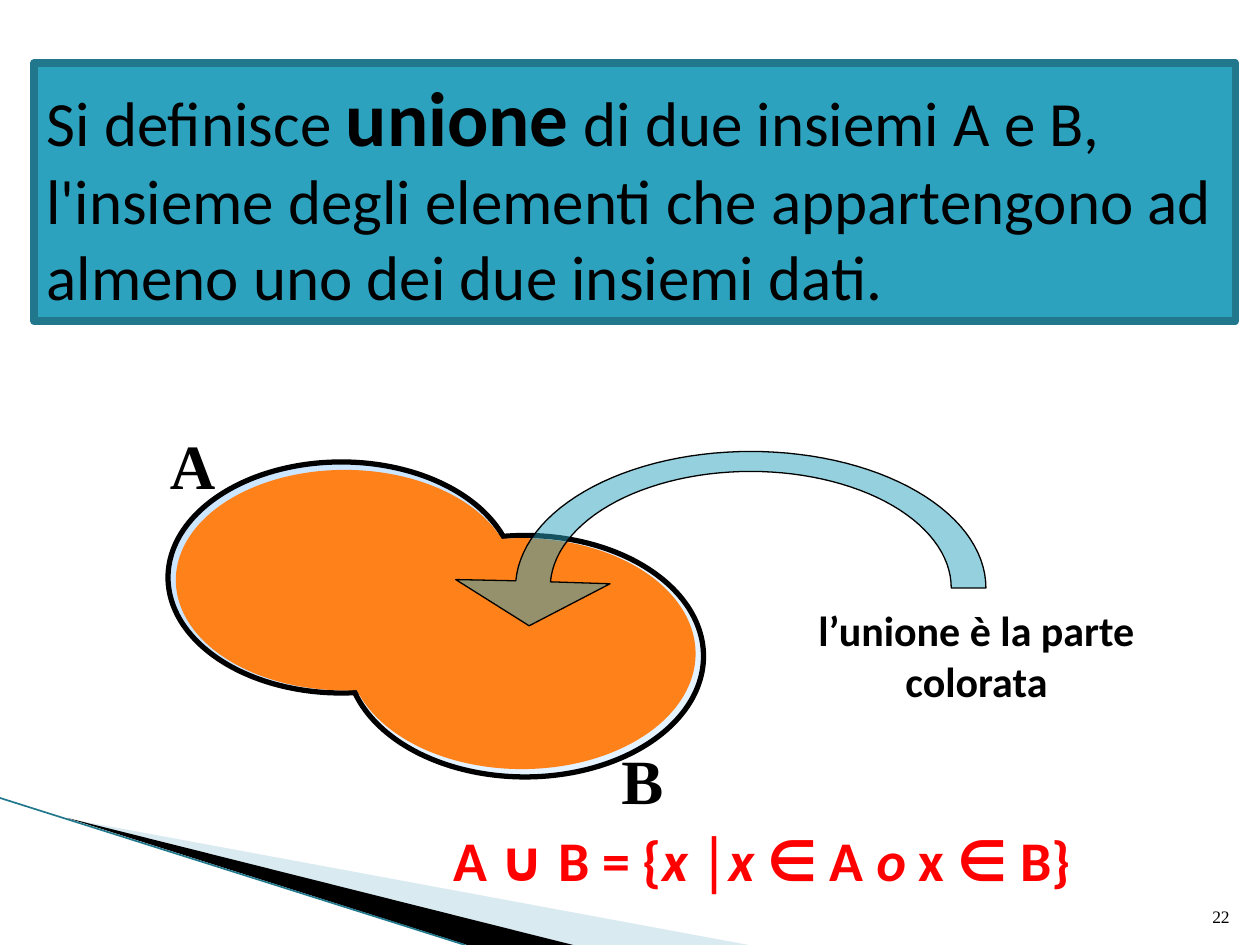
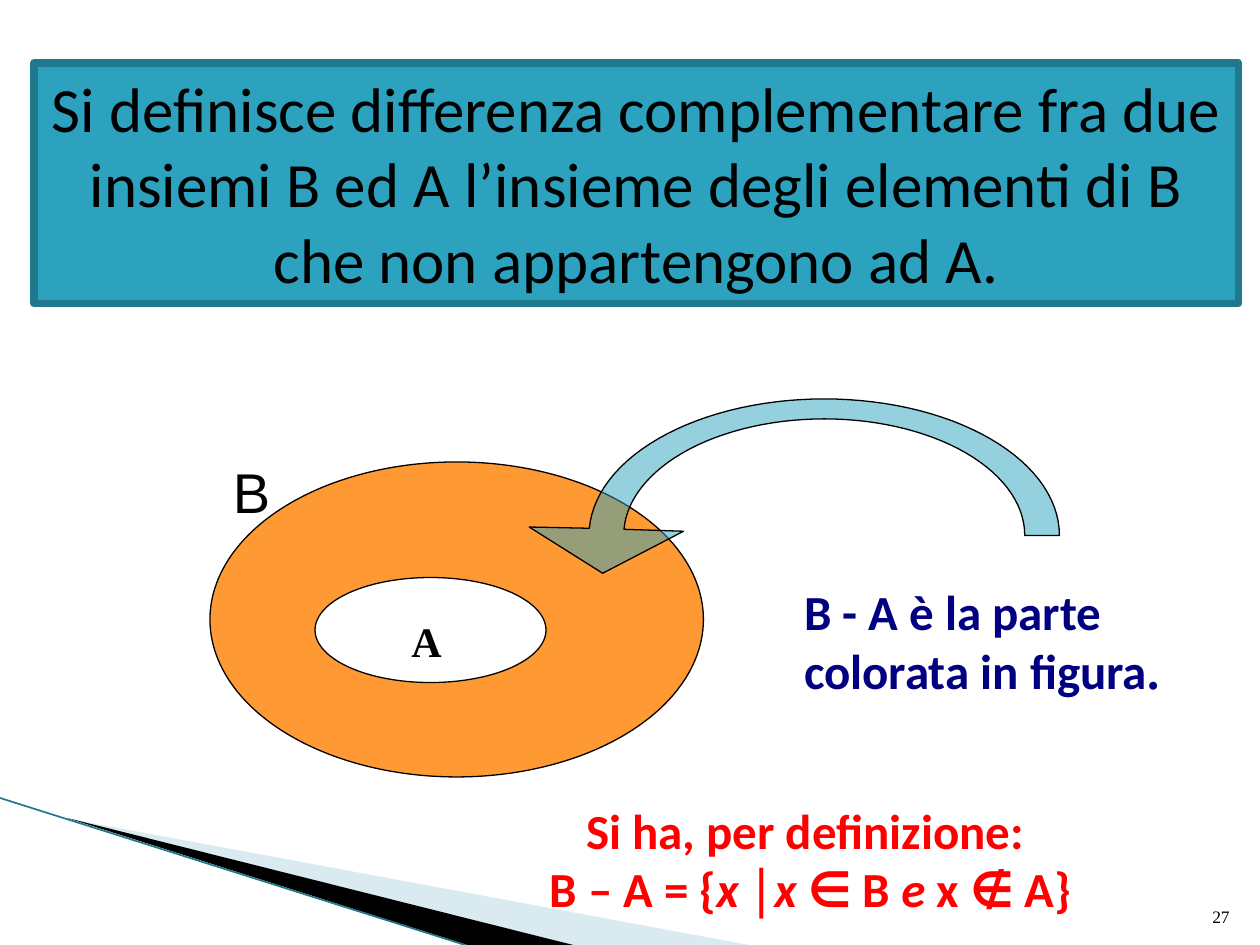
from math import cos, sin, radians
from lxml import etree
from pptx import Presentation
from pptx.dml.color import RGBColor
from pptx.enum.shapes import MSO_CONNECTOR, MSO_SHAPE
from pptx.enum.text import MSO_ANCHOR, MSO_AUTO_SIZE, PP_ALIGN
from pptx.oxml.ns import qn
from pptx.util import Inches, Pt

TEAL = RGBColor(0x2D, 0xA2, 0xBF)
DEEP = RGBColor(0x21, 0x78, 0x8D)
MIST = RGBColor(0xA0, 0xCB, 0xDC)
ICE = RGBColor(0xCD, 0xE6, 0xFF)
ORANGE = RGBColor(0xFF, 0x81, 0x19)
AMBER = RGBColor(0xFF, 0x99, 0x33)
NAVY = RGBColor(0x00, 0x00, 0x80)
RED = RGBColor(0xFF, 0x00, 0x00)
BLACK = RGBColor(0x00, 0x00, 0x00)
WHITE = RGBColor(0xFF, 0xFF, 0xFF)
SANS, SERIF, PLAIN = "Calibri", "Times New Roman", "Arial"
LEFT, MID, RIGHT = PP_ALIGN.LEFT, PP_ALIGN.CENTER, PP_ALIGN.RIGHT
RECT, OVAL = MSO_SHAPE.RECTANGLE, MSO_SHAPE.OVAL
ITAL = {"italic": True}

# Grid of 120 columns by 90 rows
prs = Presentation()
prs.slide_width, prs.slide_height = Inches(10), Inches(7.5)
UNIT = prs.slide_width // 120


def draw(slide, form, area, fill, edge=None, thick=0.75, alpha=100):
    """Add a preset shape in an area or, without a form, an outline through points."""
    if form is None:
        pts = [(x * UNIT, y * UNIT) for x, y in area]
        pen = slide.shapes.build_freeform(*pts[0])
        pen.add_line_segments(pts[1:], close=True)
        shp = pen.convert_to_shape()
    else:
        shp = slide.shapes.add_shape(form, *[round(n * UNIT) for n in area])
    shp.shadow.inherit = False
    shp.fill.solid()
    shp.fill.fore_color.rgb = fill
    if alpha < 100:
        tint = shp._element.spPr.find(qn("a:solidFill"))[0]
        etree.SubElement(tint, qn("a:alpha"), val=str(alpha * 1000))
    if edge is None:
        shp.line.fill.background()
    else:
        shp.line.color.rgb = edge
        shp.line.width = Pt(thick)
    return shp


def write(shp, runs, face, size, tint=BLACK, bold=False, align=LEFT):
    """Fill a shape with runs, each a text and its own font settings."""
    frame = shp.text_frame
    frame.word_wrap = True
    frame.vertical_anchor = MSO_ANCHOR.TOP
    frame.auto_size = MSO_AUTO_SIZE.SHAPE_TO_FIT_TEXT
    para = frame.paragraphs[0]
    para.alignment = align
    for text, own in runs:
        if text == "\n":
            para.add_line_break()
            continue
        run = para.add_run()
        run.text = text
        look = {"name": face, "size": Pt(size), "bold": bold, **own}
        for key, value in look.items():
            setattr(run.font, key, value)
        run.font.color.rgb = tint


# Content: band, ovals, texts and arrow shift of each slide
union = {
    "page": "22", "shift": (0, 0), "band": (3.25, 6, 114.4, 24.6), "align": LEFT,
    "rule": [("Si definisce ", {}), ("unione", {"size": Pt(44), "bold": True}),
             (" di due insiemi A e B, l'insieme degli elementi che appartengono"
              " ad almeno uno dei due insiemi dati.", {})],
    "ovals": [((16, 44, 33, 22), ICE, BLACK, 3, 100),
              ((33, 51, 34, 23), ICE, BLACK, 3, 50),
              ((17, 45, 31.7, 20.5), ORANGE, ORANGE, 3, 100),
              ((33.4, 51.5, 32.6, 21.5), ORANGE, ORANGE, 3, 100)],
    "texts": [((15, 40, 4, 8.4), [("A", {})], SERIF, 36, BLACK, True, LEFT),
              ((58, 70, 7, 8.4), [("B", {})], SERIF, 36, BLACK, True, LEFT),
              ((74, 57, 38, 11), [("l’unione è la parte colorata", {})],
               SANS, 24, BLACK, True, MID),
              ((42, 78, 66, 7.6),
               [("A ∪ B = {", {}), ("x ", ITAL), ("│", {}), ("x ", ITAL),
                ("∈ A ", {}), ("o", ITAL), (" x ∈ B}", {})],
               SANS, 32, RED, True, LEFT)],
}
minus = {
    "page": "27", "shift": (7, -5), "band": (3.25, 6, 114.7, 22.9), "align": MID,
    "rule": [("Si definisce differenza complementare fra due insiemi B ed A "
              "l’insieme degli elementi di B che non appartengono ad A.", {})],
    "ovals": [((20, 44, 47, 30), AMBER, BLACK, 0.75, 100),
              ((30, 55, 22, 10), WHITE, BLACK, 0.75, 100)],
    "texts": [((21, 43, 6, 7.6), [("B", {})], PLAIN, 32, BLACK, False, LEFT),
              ((38, 58, 9, 6), [("A", {})], SERIF, 24, BLACK, True, LEFT),
              ((75.4, 54.8, 41, 12.4),
               [("B - A è la parte colorata in figura", {}), (".", {"name": SERIF})],
               SANS, 28, NAVY, True, LEFT),
              ((37.7, 75.6, 79, 12.4),
               [("Si ha, per definizione: ", {}), ("\n", {}), ("B – A = {", {}),
                ("x ", ITAL), ("│", {}), ("x ", ITAL), ("∈ B ", {}),
                ("e", ITAL), (" x ∉ A}", {})],
               SANS, 28, RED, True, MID)],
}

# Curved arrow: inner arc, outer arc back, then the head
arc = [(71.5 + 19.1 * cos(radians(a)), 56 - 11.1 * sin(radians(a)))
       for a in range(177, -1, -3)]
arc += [(71.5 + 22.4 * cos(radians(a)), 56 - 13 * sin(radians(a)))
        for a in range(0, 178, 3)]
arc += [(43.4, 55.2), (50.4, 59.6), (58.1, 55.6)]

for part in (union, minus):
    slide = prs.slides.add_slide(prs.slide_layouts[6])

    # Corner wedges and line
    draw(slide, None, [(6.6, 78), (71.3, 90), (54.6, 90)], MIST, alpha=40)
    draw(slide, None, [(6.4, 77.9), (54.6, 90), (44.5, 90)], BLACK)
    line = slide.shapes.add_connector(
        MSO_CONNECTOR.STRAIGHT, 0, 76 * UNIT, round(44.3 * UNIT), 90 * UNIT)
    line.line.color.rgb = DEEP
    line.line.width = Pt(0.95)
    etree.SubElement(line._element.spPr, qn("a:effectLst"))

    # Page number
    page = slide.shapes.add_textbox(
        *[round(n * UNIT) for n in (113.5, 84.1, 4.8, 4.8)])
    write(page, [(part["page"], {})], SERIF, 10, align=RIGHT)
    page.text_frame.auto_size = MSO_AUTO_SIZE.NONE
    page.text_frame.vertical_anchor = MSO_ANCHOR.BOTTOM

    # Definition band
    band = draw(slide, RECT, part["band"], TEAL, DEEP, 4.33)
    write(band, part["rule"], SANS, 36, align=part["align"])

    # Sets and their labels
    for oval in part["ovals"]:
        draw(slide, OVAL, *oval)
    for area, *text in part["texts"]:
        box = slide.shapes.add_textbox(*[round(n * UNIT) for n in area])
        write(box, *text)

    # Arrow to the coloured part
    dx, dy = part["shift"]
    draw(slide, None, [(x + dx, y + dy) for x, y in arc], TEAL, BLACK, alpha=50)

prs.save("out.pptx")
